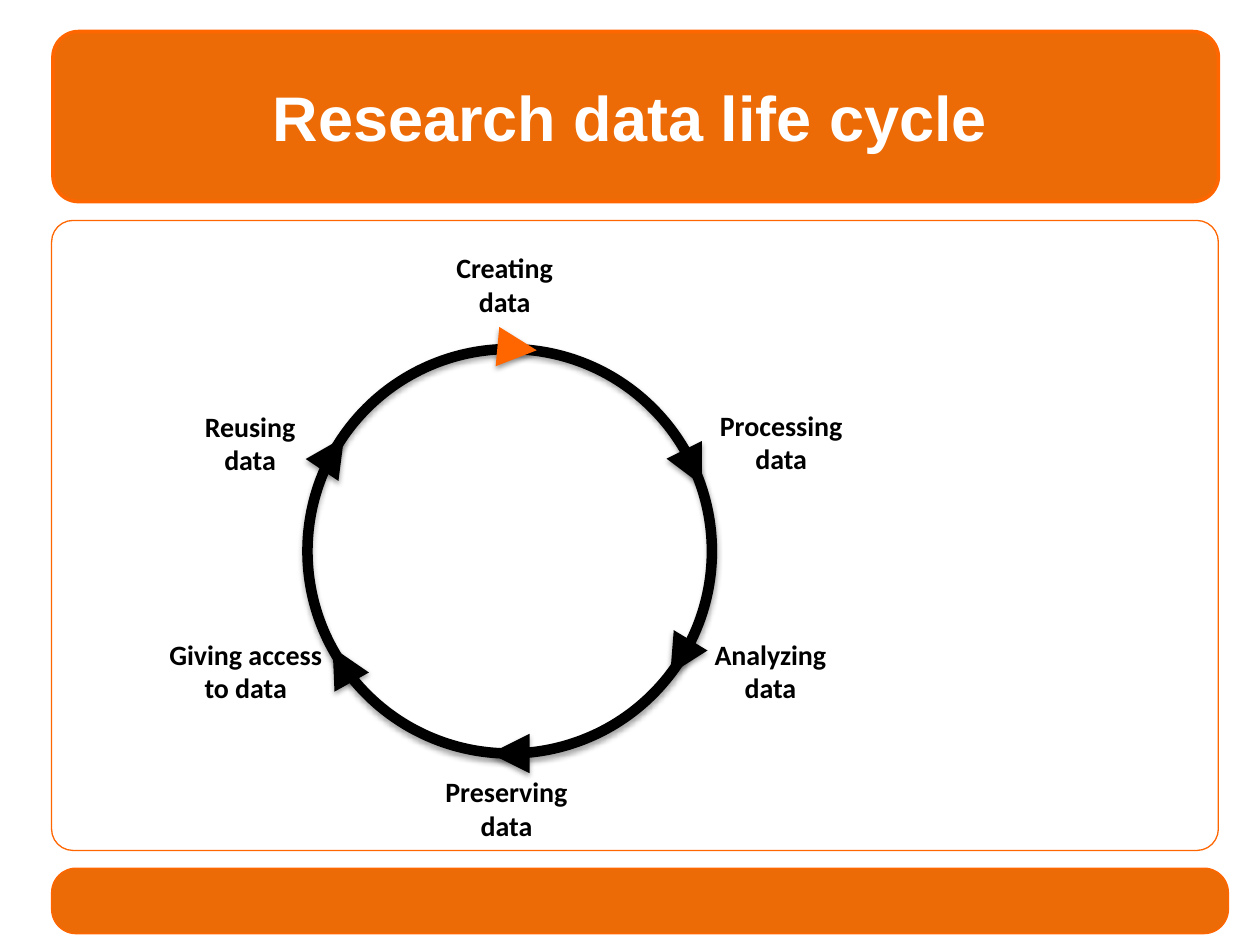
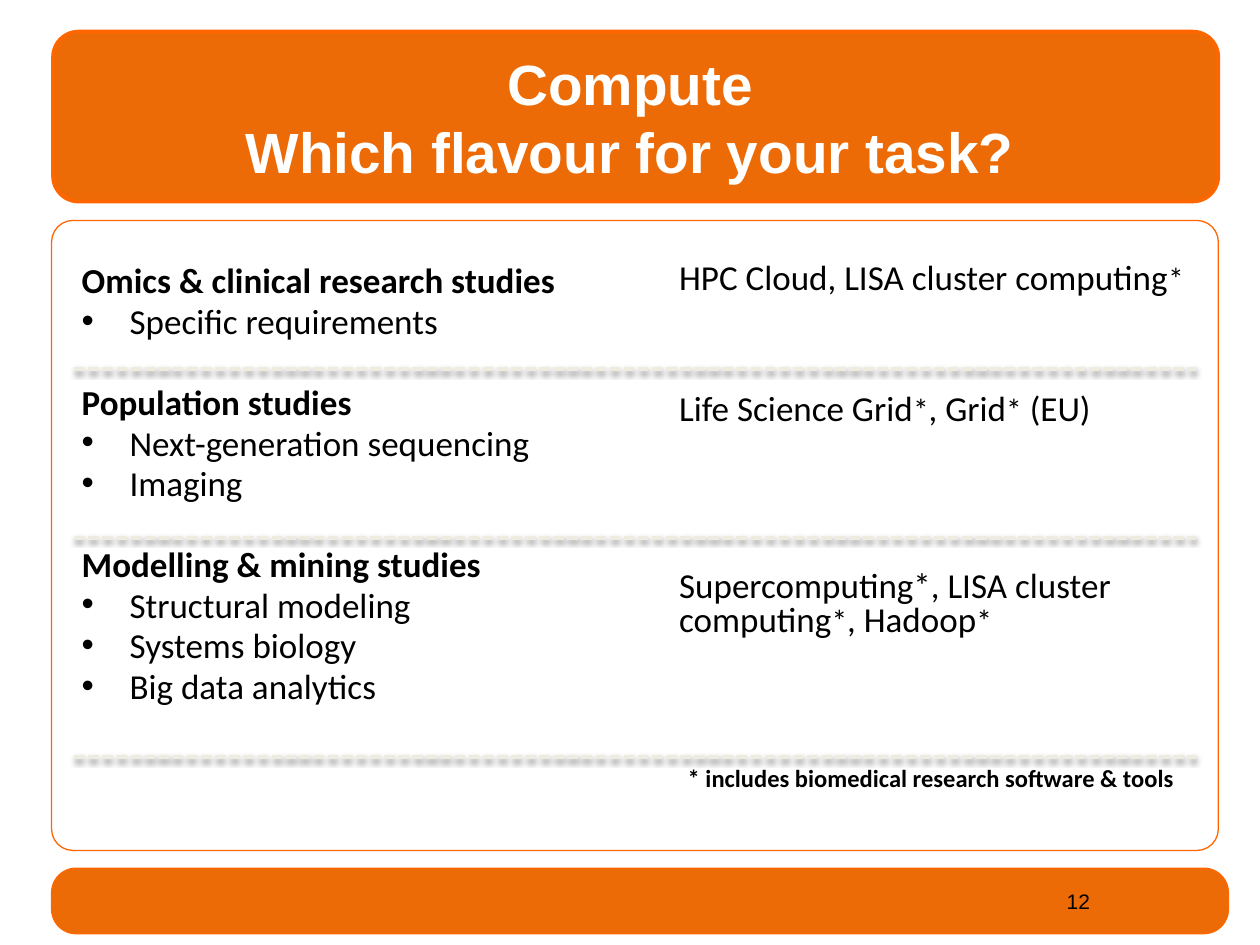
from lxml import etree
from pptx import Presentation
from pptx import util as u
from pptx.dml.color import RGBColor
from pptx.enum import dml, shapes, text
from pptx.oxml.ns import qn

ORANGE = RGBColor(0xED, 0x6B, 0x06)
EDGE = RGBColor(0xFF, 0x66, 0x00)
BLACK = RGBColor(0x00, 0x00, 0x00)
WHITE = RGBColor(0xFF, 0xFF, 0xFF)
CREAM = RGBColor(0xEE, 0xEC, 0xE1)

LEFT, CENTER, RIGHT, JUSTIFY = (
    text.PP_ALIGN.LEFT, text.PP_ALIGN.CENTER, text.PP_ALIGN.RIGHT, text.PP_ALIGN.JUSTIFY)

BANDS = [
    ((0.41, 6.89, 9.34, 0.52), 0.374, ORANGE, 0.75),
    ((0.42, 0.25, 9.25, 1.35), 0.15, ORANGE, 2),
    ((0.41, 1.75, 9.26, 5), 0.034, None, 0.75),
]
RING = (2.44, 2.77, 3.21, 3.21)
ARROWS = [
    ((5.52, 3.75), (5.57, 3.85), BLACK),
    ((5.38, 5.25), (5.32, 5.35), BLACK),
    ((4, 5.98), (3.89, 5.98), BLACK),
    ((2.69, 5.23), (2.64, 5.14), BLACK),
    ((2.67, 3.56), (2.73, 3.47), BLACK),
    ((4.15, 2.77), (4.26, 2.78), EDGE),
]
STAGES = [
    ((5.55, 5.01, 1.13, 0.64), ["Analyzing", "data"], False),
    ((3.43, 6.1, 1.18, 0.64), ["Preserving", "data"], False),
    ((3.51, 1.94, 0.99, 0.64), ["Creating", "data"], False),
    ((5.57, 3.19, 1.26, 0.64), ["Processing", "data"], True),
    ((1.24, 5.01, 1.42, 0.64), ["Giving access to data"], True),
    ((1.51, 3.2, 0.95, 0.64), ["Reusing", "data"], False),
]
STUDIES = {
    "Omics & clinical research studies": ["Specific requirements"],
    "Population studies": ["Next-generation sequencing", "Imaging"],
    "Modelling & mining studies": [
        "Structural modeling", "Systems biology", "Big data analytics"],
}
SERVICES = [
    (0, [("HPC Cloud, LISA cluster computing", 20), ("*", 18)]),
    (56, [("Life Science Grid", 20), ("*", 18), (", Grid", 20), ("*", 18), (" (EU)", 20)]),
    (82, [("Supercomputing*, LISA cluster computing", 20), ("*", 18),
          (", Hadoop", 20), ("*", 18)]),
]
DIVIDERS = [2.93, 4.27, 6.01]


def inches(*lengths):
    return [u.Inches(length) for length in lengths]


class Deck:
    def __init__(self):
        self.deck = Presentation()
        self.deck.slide_width, self.deck.slide_height = inches(10, 7.5)
        self.layout = self.deck.slide_layouts[5]
        self.page = None

    def add_page(self, title, size):
        first = self.page is None
        self.page = self.deck.slides.add_slide(self.layout)
        if first:
            self.add_bands()
        box = self.page.shapes.title
        box.left, box.top, box.width, box.height = inches(0.5, 0.3, 9, 1.25)
        frame = box.text_frame
        frame.auto_size = text.MSO_AUTO_SIZE.NONE
        frame.vertical_anchor = text.MSO_ANCHOR.MIDDLE
        para = frame.paragraphs[0]
        para.text = title
        self.style(para, size, CENTER, True, WHITE, "Arial")

    def add_bands(self):
        tree = self.layout.shapes._spTree
        for number, (place, corner, fill, width) in enumerate(BANDS):
            band = self.shape(shapes.MSO_SHAPE.ROUNDED_RECTANGLE, place, fill, EDGE, width)
            band.adjustments[0] = corner
            band._element.nvSpPr.cNvPr.set("id", str(20 + number))
            tree.insert(2 + number, band._element)

    def shape(self, kind, place, fill, edge, width):
        shape = self.page.shapes.add_shape(kind, *inches(*place))
        if fill is None:
            shape.fill.background()
        else:
            shape.fill.solid()
            shape.fill.fore_color.rgb = fill
        shape.line.color.rgb = edge
        shape.line.width = u.Pt(width)
        shape.shadow.inherit = False
        return shape

    def shade(self, shape, opacity, distance):
        properties = shape._element.spPr
        effects = properties.find(qn("a:effectLst"))
        if effects is None:
            effects = etree.SubElement(properties, qn("a:effectLst"))
        shadow = etree.SubElement(
            effects, qn("a:outerShdw"), blurRad=str(u.Pt(3.1)), dist=str(u.Pt(distance)),
            dir="5400000", rotWithShape="0")
        color = etree.SubElement(shadow, qn("a:srgbClr"), val=str(BLACK))
        etree.SubElement(color, qn("a:alpha"), val=str(opacity * 1000))

    def line(self, start, end, color, width, dash=None, arrow=False):
        line = self.page.shapes.add_connector(
            shapes.MSO_CONNECTOR.STRAIGHT, *inches(*start, *end))
        line.line.color.rgb = color
        line.line.width = u.Pt(width)
        if dash:
            line.line.dash_style = dash
        if arrow:
            etree.SubElement(line.line._get_or_add_ln(), qn("a:tailEnd"), type="triangle")
        self.shade(line, 38, 1.6)

    def box(self, place, wrap=True, grow=False):
        frame = self.page.shapes.add_textbox(*inches(*place)).text_frame
        frame.word_wrap = wrap
        if grow:
            frame.auto_size = text.MSO_AUTO_SIZE.SHAPE_TO_FIT_TEXT
        return frame

    def style(self, para, size, align, bold, color=BLACK, font="Calibri"):
        para.alignment = align
        para.font.name = font
        para.font.size = u.Pt(size)
        para.font.bold = bold
        para.font.color.rgb = color

    def add_para(self, frame, spans, size, align=LEFT, bold=False, font="Calibri",
                 spacing=None, before=0, bullet=False):
        para = frame.paragraphs[0]
        if para.runs:
            para = frame.add_paragraph()
        if bullet:
            properties = para._p.get_or_add_pPr()
            indent = u.Inches(0.38)
            properties.set("marL", str(indent))
            properties.set("indent", str(-indent))
            etree.SubElement(properties, qn("a:buFont"), typeface="Arial")
            etree.SubElement(properties, qn("a:buChar"), char="•")
        if spacing:
            para.line_spacing = spacing
        if before:
            para.space_before = u.Pt(before)
        self.style(para, size, align, bold, font=font)
        for words, span_size in spans:
            span = para.add_run()
            span.text = words
            if span_size != size:
                span.font.size = u.Pt(span_size)


def build_life_cycle(deck):
    deck.add_page("Research data life cycle", 36)
    ring = deck.shape(shapes.MSO_SHAPE.OVAL, RING, None, BLACK, 6)
    ring.rotation = 30
    deck.shade(ring, 35, 1.8)
    for start, end, color in ARROWS:
        deck.line(start, end, color, 7.5, arrow=True)
    for place, lines, wrap in STAGES:
        frame = deck.box(place, wrap, grow=True)
        for words in lines:
            deck.add_para(frame, [(words, 16)], 16, CENTER, bold=True)


def build_compute(deck):
    deck.add_page("Compute\vWhich flavour for your task?", 32.4)
    studies = deck.box((0.55, 2.07, 4.61, 5.4))
    for number, (study, needs) in enumerate(STUDIES.items()):
        deck.add_para(studies, [(study, 20)], 20, JUSTIFY, bold=True, spacing=0.8,
                      before=27 if number else 0)
        for need in needs:
            deck.add_para(studies, [(need, 20)], 20, JUSTIFY, spacing=0.8, before=4,
                          bullet=True)

    services = deck.box((5.39, 2.09, 4.25, 5.4))
    services.margin_left = services.margin_right = 0
    services.margin_top = services.margin_bottom = 0
    for before, spans in SERVICES:
        deck.add_para(services, spans, 20, spacing=0.8, before=before)

    note = deck.box((5.36, 6.01, 4.21, 0.34), grow=True)
    deck.add_para(note, [("* includes biomedical research software & tools", 14)], 14, bold=True)
    for top in DIVIDERS:
        deck.line((0.59, top), (9.49, top), CREAM, 2, dash=dml.MSO_LINE.SQUARE_DOT)

    number = deck.box((6.42, 6.95, 2.33, 0.4))
    number.vertical_anchor = text.MSO_ANCHOR.MIDDLE
    deck.add_para(number, [("12", 12)], 12, RIGHT, font="Arial")


def main():
    deck = Deck()
    build_life_cycle(deck)
    build_compute(deck)
    deck.deck.save("out.pptx")


if __name__ == "__main__":
    main()
